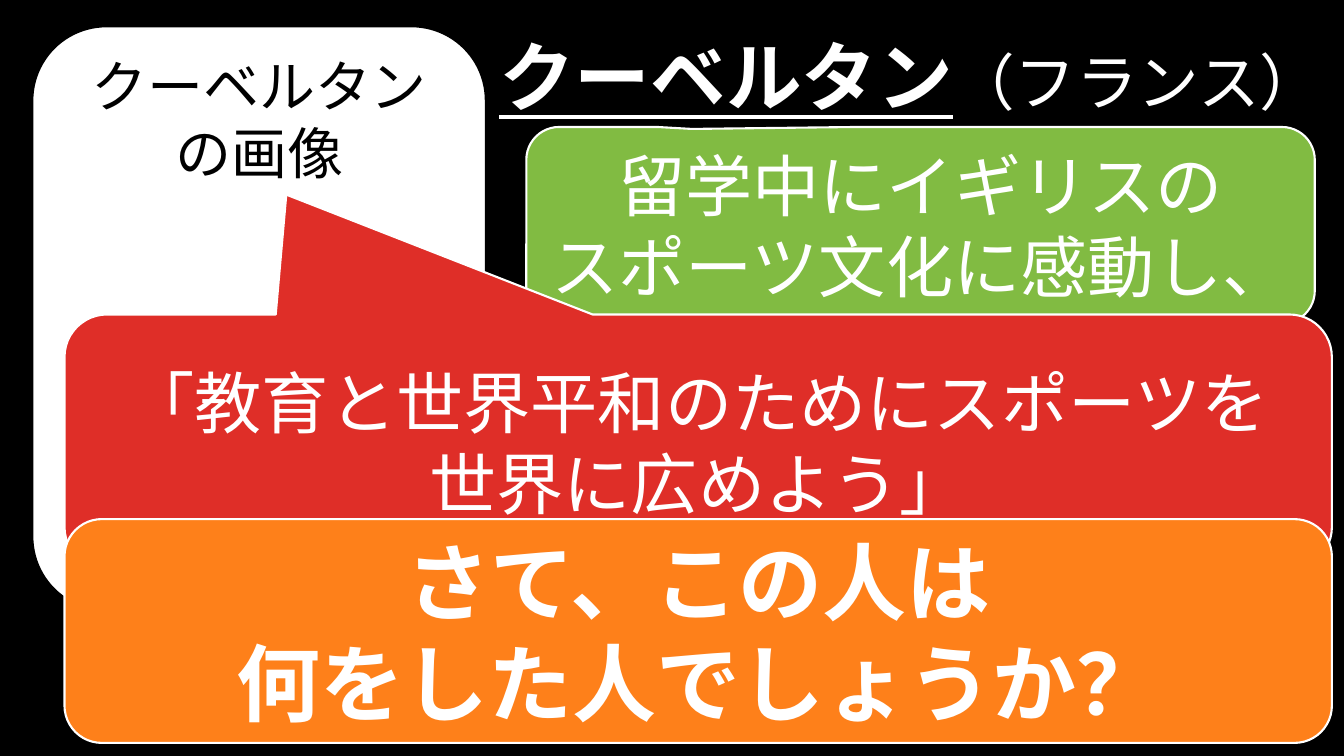
import pptx
import pptx.util
import pptx.dml.color
import pptx.enum.shapes
import pptx.enum.text
from dataclasses import dataclass

Inches = pptx.util.Inches
Shape = pptx.enum.shapes.MSO_SHAPE
Anchor = pptx.enum.text.MSO_ANCHOR
Align = pptx.enum.text.PP_ALIGN


@dataclass(frozen=True)
class Theme:
    face: str = "Calibri"
    black: str = "000000"
    white: str = "FFFFFF"
    green: str = "81BB42"
    red: str = "DF2E28"
    orange: str = "FE801A"
    name: int = 54
    land: int = 44
    photo: int = 40
    speech: int = 48
    quiz: int = 60
    thin: float = 1.5
    thick: float = 4.5


THEME = Theme()


def tint(code):
    return pptx.dml.color.RGBColor.from_string(code)


def style(font, size, color, bold=False):
    font.name = THEME.face
    font.size = pptx.util.Pt(size)
    font.color.rgb = tint(color)
    font.bold = bold


def panel(slide, kind, box, lines, size, fill, ink=THEME.white,
          edge=THEME.white, width=THEME.thin, bold=False,
          anchor=Anchor.MIDDLE, tip=None):
    """Draw a rounded panel or callout with centred lines."""
    shape = slide.shapes.add_shape(kind, *map(Inches, box))
    shape.shadow.inherit = False
    shape.fill.solid()
    shape.fill.fore_color.rgb = tint(fill)
    shape.line.color.rgb = tint(edge)
    shape.line.width = pptx.util.Pt(width)
    if tip:
        shape.adjustments[0], shape.adjustments[1] = tip
    frame = shape.text_frame
    frame.word_wrap = True
    frame.vertical_anchor = anchor
    frame.text = "\n".join(lines)
    for para in frame.paragraphs:
        para.alignment = Align.CENTER
        style(para.font, size, ink, bold)


def heading(slide, box):
    """Place the underlined name and the country in the title."""
    title = slide.shapes.title
    title.left, title.top, title.width, title.height = map(Inches, box)
    frame = title.text_frame
    frame.word_wrap = True
    frame.auto_size = pptx.enum.text.MSO_AUTO_SIZE.NONE
    frame.vertical_anchor = Anchor.MIDDLE
    para = frame.paragraphs[0]
    para.alignment = Align.RIGHT
    para.line_spacing = 0.9
    for text, size, strong in (("クーベルタン", THEME.name, True),
                               ("（フランス）", THEME.land, False)):
        run = para.add_run()
        run.text = text
        style(run.font, size, THEME.white, strong)
        run.font.underline = strong


def main():
    deck = pptx.Presentation()
    deck.slide_width, deck.slide_height = Inches(13.33), Inches(7.5)
    slide = deck.slides.add_slide(deck.slide_layouts[5])
    slide.background.fill.solid()
    slide.background.fill.fore_color.rgb = tint(THEME.black)
    callout = Shape.ROUNDED_RECTANGULAR_CALLOUT
    rounded = Shape.ROUNDED_RECTANGLE

    heading(slide, (4.51, -0.05, 8.7, 1.71))

    # What moved him
    panel(slide, callout, (5.22, 1.26, 7.82, 1.95),
          ("留学中にイギリスの", "スポーツ文化に感動し、"),
          THEME.speech, THEME.green, tip=(-0.29, -0.49))

    # Portrait frame
    panel(slide, rounded, (0.3, 0.24, 4.54, 5.84),
          ("クーベルタン", "の画像"), THEME.photo, THEME.white,
          ink=THEME.black, edge=THEME.black, width=THEME.thick,
          anchor=Anchor.TOP)

    # His words
    panel(slide, callout, (0.64, 3.12, 12.57, 2.53),
          ("「教育と世界平和のためにスポーツを", "世界に広めよう」"),
          THEME.speech, THEME.red, tip=(-0.325, -0.97))

    # Question
    panel(slide, rounded, (0.64, 5.15, 12.57, 2.22),
          ("さて、この人は", "何をした人でしょうか？"),
          THEME.quiz, THEME.orange, bold=True)

    deck.save("out.pptx")


if __name__ == "__main__":
    main()
